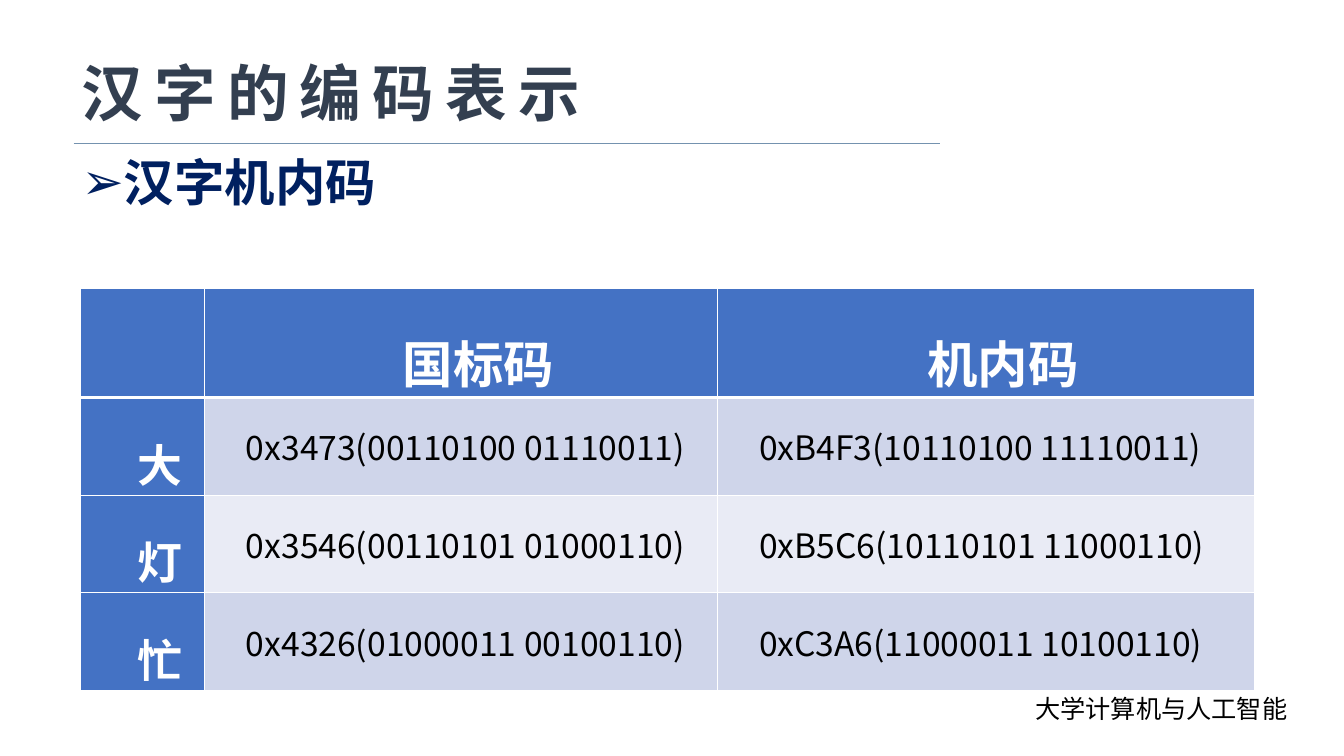
from dataclasses import dataclass

from lxml import etree
from pptx import Presentation
from pptx import util as u
from pptx.dml.color import RGBColor
from pptx.enum import shapes, text
from pptx.oxml import ns

FONT = "Noto Sans CJK SC"
WHITE = "FFFFFF"
BLACK = "000000"
BLUE = "4472C4"
BANDS = ("CFD5EA", "E9EBF5")


@dataclass(frozen=True)
class Style:
    size: float
    color: str
    bold: bool = False
    spacing: float = 0


@dataclass(frozen=True)
class CodeRow:
    character: str
    national: str
    internal: str


TITLE = Style(44, "333F50", True, 8)
TOPIC = Style(36, "002060", True)
HEADING = Style(36, WHITE, True)
CHARACTER = Style(32, WHITE, True)
CODE = Style(24, BLACK)
COURSE = Style(18, BLACK)

HEADINGS = ("", "国标码", "机内码")
CODE_ROWS = (
    CodeRow("大", "0x3473(00110100 01110011)", "0xB4F3(10110100 11110011)"),
    CodeRow("灯", "0x3546(00110101 01000110)", "0xB5C6(10110101 11000110)"),
    CodeRow("忙", "0x4326(01000011 00100110)", "0xC3A6(11000011 10100110)"),
)


def rgb(value: str) -> RGBColor:
    return RGBColor.from_string(value)


def write(paragraph, words: str, style: Style) -> None:
    run = paragraph.add_run()
    run.text = words
    run.font.size = u.Pt(style.size)
    run.font.bold = style.bold
    run.font.name = FONT
    run.font.color.rgb = rgb(style.color)
    properties = run.font._element
    etree.SubElement(properties, ns.qn("a:ea"), typeface=FONT)
    if style.spacing:
        properties.set("spc", str(round(style.spacing * 100)))


def place(shape, left: float, top: float, width: float, height: float) -> None:
    shape.left, shape.top = u.Inches(left), u.Inches(top)
    shape.width, shape.height = u.Inches(width), u.Inches(height)


def indent(paragraph, margin: float, first: float) -> None:
    properties = paragraph._p.get_or_add_pPr()
    properties.set("marL", str(u.Inches(margin)))
    properties.set("indent", str(u.Inches(first)))


def add_title(slide) -> None:
    title = slide.shapes.title
    place(title, 0.71, 0.5, 11.5, 0.91)
    frame = title.text_frame
    frame.auto_size = text.MSO_AUTO_SIZE.NONE
    frame.vertical_anchor = text.MSO_ANCHOR.MIDDLE
    heading = frame.paragraphs[0]
    heading.alignment = text.PP_ALIGN.LEFT
    heading.line_spacing = 0.9
    write(heading, "汉字的编码表示", TITLE)


def add_rule(slide) -> None:
    rule = slide.shapes.add_connector(
        shapes.MSO_CONNECTOR.STRAIGHT,
        u.Inches(0.73), u.Inches(1.42), u.Inches(9.32), u.Inches(1.42))
    rule.line.color.rgb = rgb("7492AF")
    rule.line.width = u.Pt(0.5)
    etree.SubElement(rule._element.spPr, ns.qn("a:effectLst"))


def add_topic(slide) -> None:
    body = slide.placeholders[1]
    place(body, 0.71, 1.52, 11.98, 5.13)
    frame = body.text_frame
    frame.auto_size = text.MSO_AUTO_SIZE.NONE
    topic = frame.paragraphs[0]
    indent(topic, 0.25, -0.25)
    properties = topic._p.get_or_add_pPr()
    etree.SubElement(properties, ns.qn("a:buFont"), typeface="Arial")
    etree.SubElement(properties, ns.qn("a:buChar"), char="➢")
    topic.line_spacing = 0.9
    topic.space_before = u.Pt(0)
    write(topic, "汉字机内码", TOPIC)


def set_borders(cell, top: float, bottom: float) -> None:
    properties = cell._tc.get_or_add_tcPr()
    edges = (("L", 1), ("R", 1), ("T", top), ("B", bottom))
    for position, (side, points) in enumerate(edges):
        edge = etree.Element(ns.qn(f"a:ln{side}"), w=str(u.Pt(points)))
        fill = etree.SubElement(edge, ns.qn("a:solidFill"))
        etree.SubElement(fill, ns.qn("a:srgbClr"), val=WHITE)
        properties.insert(position, edge)


def fill_cell(cell, words: str, style: Style, background: str, centred: bool) -> None:
    cell.fill.solid()
    cell.fill.fore_color.rgb = rgb(background)
    cell.margin_left = cell.margin_right = u.Inches(0.07)
    cell.margin_top = cell.margin_bottom = 0
    if not words:
        return
    entry = cell.text_frame.paragraphs[0]
    entry.alignment = text.PP_ALIGN.CENTER if centred else text.PP_ALIGN.LEFT
    indent(entry, 0, 0.34)
    entry.line_spacing = 1.5
    write(entry, words, style)


def add_code_table(slide) -> None:
    codes = slide.shapes.add_table(
        len(CODE_ROWS) + 1, len(HEADINGS),
        u.Inches(0.8), u.Inches(2.86), u.Inches(11.64), u.Inches(3.96)).table
    codes.horz_banding = False
    for column, width in zip(codes.columns, (1.23, 5.09, 5.32)):
        column.width = u.Inches(width)
    for row, height in zip(codes.rows, (1.08, 0.96, 0.96, 0.96)):
        row.height = u.Inches(height)
    for column, heading in enumerate(HEADINGS):
        cell = codes.cell(0, column)
        fill_cell(cell, heading, HEADING, BLUE, True)
        set_borders(cell, 1, 3)
    for number, code in enumerate(CODE_ROWS, 1):
        band = BANDS[(number - 1) % 2]
        fill_cell(codes.cell(number, 0), code.character, CHARACTER, BLUE, True)
        fill_cell(codes.cell(number, 1), code.national, CODE, band, False)
        fill_cell(codes.cell(number, 2), code.internal, CODE, band, False)
        for column in range(len(HEADINGS)):
            set_borders(codes.cell(number, column), 3 if number == 1 else 1, 1)


def add_course_name(slide) -> None:
    course = slide.shapes.add_textbox(
        u.Inches(10.17), u.Inches(6.83), u.Inches(2.73), u.Inches(0.4))
    frame = course.text_frame
    frame.word_wrap = False
    frame.auto_size = text.MSO_AUTO_SIZE.SHAPE_TO_FIT_TEXT
    write(frame.paragraphs[0], "大学计算机与人工智能", COURSE)


def main() -> None:
    deck = Presentation()
    deck.slide_width, deck.slide_height = u.Inches(13.33), u.Inches(7.5)
    slide = deck.slides.add_slide(deck.slide_layouts[1])
    add_rule(slide)
    add_title(slide)
    add_topic(slide)
    add_code_table(slide)
    add_course_name(slide)
    deck.save("out.pptx")


if __name__ == "__main__":
    main()
